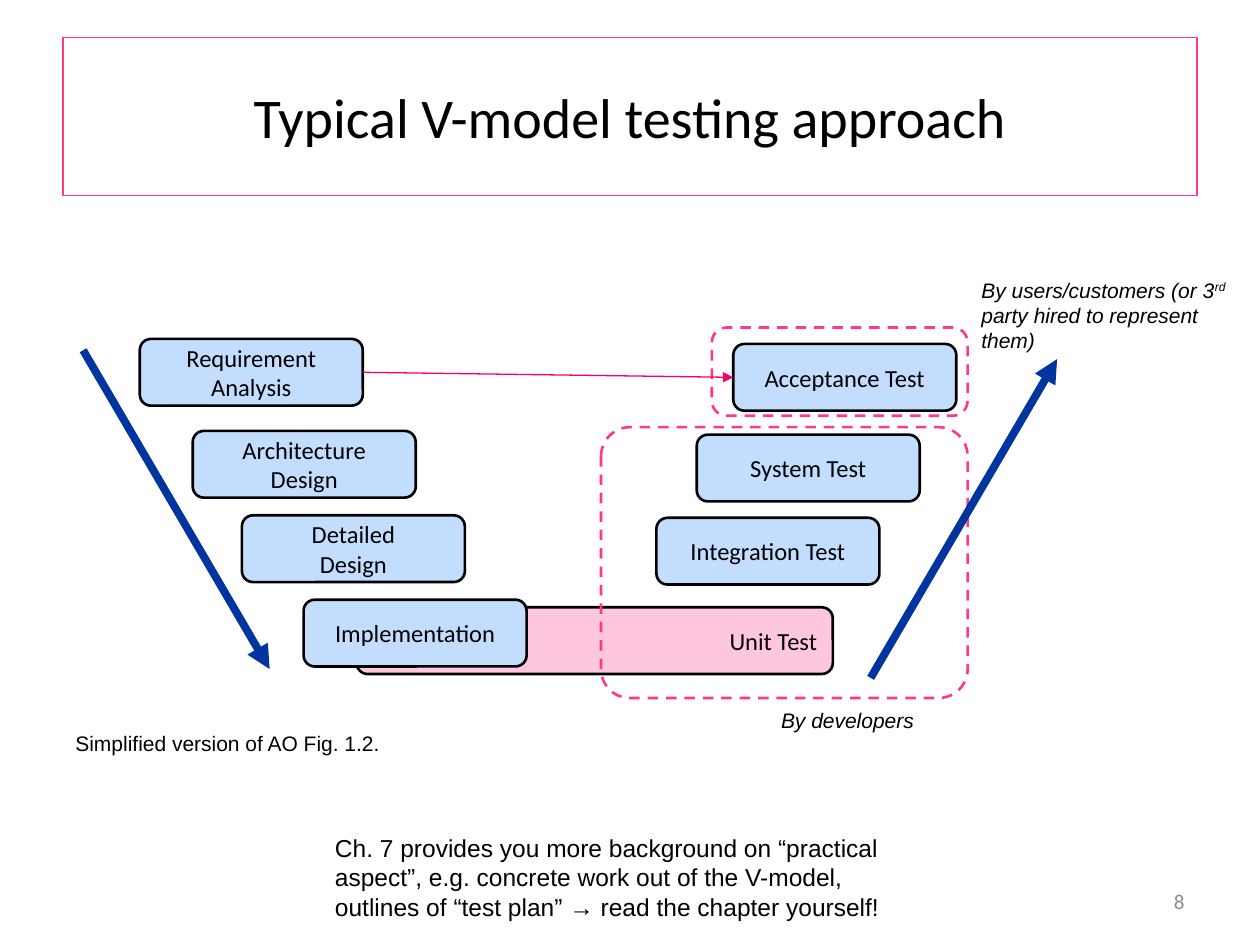
from dataclasses import dataclass

from lxml import etree
from pptx import Presentation
from pptx.dml.color import RGBColor
from pptx.enum.dml import MSO_LINE
from pptx.enum.shapes import MSO_CONNECTOR, MSO_SHAPE
from pptx.enum.text import MSO_ANCHOR, MSO_AUTO_SIZE, PP_ALIGN
from pptx.oxml.ns import qn
from pptx.util import Inches, Pt

BLACK = RGBColor(0x00, 0x00, 0x00)
GRAY = RGBColor(0x8C, 0x8C, 0x8C)
PINK = RGBColor(0xFF, 0x38, 0x8C)
LIGHT_PINK = RGBColor(0xFF, 0xC7, 0xDD)
MAGENTA = RGBColor(0xF9, 0x00, 0x69)
LIGHT_BLUE = RGBColor(0xC3, 0xDD, 0xFF)
NAVY = RGBColor(0x00, 0x34, 0x9E)

PHASE_WIDTH, PHASE_HEIGHT = 1.77, 0.53


@dataclass
class Box:
    left: float
    top: float
    width: float
    height: float

    def lengths(self):
        return map(Inches, (self.left, self.top, self.width, self.height))


@dataclass
class Phase:
    text: str
    left: float
    top: float


@dataclass
class Style:
    font: str = "Arial"
    size: float = 12
    color: RGBColor = BLACK
    italic: bool = False
    align: PP_ALIGN = PP_ALIGN.LEFT


LABEL = Style("Calibri", 14, align=PP_ALIGN.CENTER)
NOTE = Style(italic=True)

PHASES = [
    Phase("Requirement Analysis", 1.11, 2.69),
    Phase("Architecture Design", 1.53, 3.42),
    Phase("Detailed\nDesign", 1.92, 4.09),
    Phase("Implementation", 2.41, 4.76),
    Phase("Integration Test", 5.21, 4.11),
    Phase("System Test", 5.53, 3.45),
    Phase("Acceptance Test", 5.82, 2.73),
]


def write(shape, text: str, style: Style, anchor=MSO_ANCHOR.MIDDLE):
    frame = shape.text_frame
    frame.word_wrap = True
    frame.vertical_anchor = anchor
    frame.text = text
    for paragraph in frame.paragraphs:
        paragraph.alignment = style.align
        font = paragraph.font
        font.name, font.size, font.italic = style.font, Pt(style.size), style.italic
        font.color.rgb = style.color
    return frame


def add_box(slide, kind: MSO_SHAPE, box: Box, line: RGBColor, weight: float, fill=None):
    shape = slide.shapes.add_shape(kind, *box.lengths())
    shape.shadow.inherit = False
    if fill is None:
        shape.fill.background()
    else:
        shape.fill.solid()
        shape.fill.fore_color.rgb = fill
    shape.line.color.rgb = line
    shape.line.width = Pt(weight)
    return shape


def add_group_outline(slide, box: Box, corner: float):
    outline = add_box(slide, MSO_SHAPE.ROUNDED_RECTANGLE, box, PINK, 1.5)
    outline.adjustments[0] = corner
    outline.line.dash_style = MSO_LINE.DASH


def add_note(slide, box: Box, text: str, style: Style):
    note = slide.shapes.add_textbox(*box.lengths())
    frame = write(note, text, style, MSO_ANCHOR.TOP)
    frame.auto_size = MSO_AUTO_SIZE.SHAPE_TO_FIT_TEXT
    return frame


def add_arrow(slide, start: tuple, end: tuple, color: RGBColor, weight: float):
    arrow = slide.shapes.add_connector(
        MSO_CONNECTOR.STRAIGHT, *map(Inches, start + end))
    arrow.line.color.rgb = color
    arrow.line.width = Pt(weight)
    etree.SubElement(arrow.line._get_or_add_ln(), qn("a:tailEnd"), type="triangle")
    etree.SubElement(arrow._element.spPr, qn("a:effectLst"))
    return arrow


def main():
    prs = Presentation()
    prs.slide_width, prs.slide_height = Inches(10), Inches(7.5)
    slide = prs.slides.add_slide(prs.slide_layouts[6])

    # Unit test bar, behind the implementation phase
    unit_test = add_box(slide, MSO_SHAPE.ROUNDED_RECTANGLE,
                        Box(2.83, 4.82, 3.78, PHASE_HEIGHT), BLACK, 1.5, LIGHT_PINK)
    write(unit_test, "Unit Test", Style("Calibri", 14, align=PP_ALIGN.RIGHT))

    # Title and page number
    title = add_box(slide, MSO_SHAPE.RECTANGLE, Box(0.5, 0.3, 9, 1.25), PINK, 0.75)
    write(title, "Typical V-model testing approach",
          Style("Calibri", 32, align=PP_ALIGN.CENTER))
    page_number = slide.shapes.add_textbox(*Box(7.17, 6.95, 2.33, 0.4).lengths())
    write(page_number, "8", Style("Calibri", 12, GRAY, align=PP_ALIGN.RIGHT))

    # Who carries out the tests
    add_group_outline(slide, Box(5.65, 2.6, 2.03, 0.7), 0.167)
    users = add_note(slide, Box(7.69, 2.15, 2.19, 0.71),
                     "By users/customers (or 3", NOTE).paragraphs[0]
    ordinal = users.add_run()
    ordinal.text = "rd"
    ordinal.font._element.set("baseline", "30000")
    users.add_run().text = " party hired to represent them)"
    add_group_outline(slide, Box(4.77, 3.39, 2.91, 2.15), 0.107)
    add_note(slide, Box(6.1, 5.57, 1.48, 0.3), "By developers", NOTE)

    # Reading advice
    add_note(slide, Box(2.56, 6.56, 4.75, 0.81),
             "Ch. 7 provides you more background on “practical aspect”, "
             "e.g. concrete work out of the V-model, outlines of “test plan” "
             "→ read the chapter yourself!", Style(size=14))

    # Phases of the V
    phases = {}
    for phase in PHASES:
        box = Box(phase.left, phase.top, PHASE_WIDTH, PHASE_HEIGHT)
        phases[phase.text] = add_box(
            slide, MSO_SHAPE.ROUNDED_RECTANGLE, box, BLACK, 1.5, LIGHT_BLUE)
        write(phases[phase.text], phase.text, LABEL)

    # Directions of the V, and the link from requirements to acceptance
    add_arrow(slide, (0.66, 2.78), (2.14, 5.31), NAVY, 4.5)
    link = add_arrow(slide, (2.88, 2.96), (5.82, 2.99), MAGENTA, 0.75)
    link.begin_connect(phases["Requirement Analysis"], 3)
    link.end_connect(phases["Acceptance Test"], 1)
    add_arrow(slide, (6.91, 5.38), (8.39, 2.85), NAVY, 4.5)

    # Figure source
    figure_source = add_note(slide, Box(0.5, 5.75, 2.64, 0.3),
                             "Simplified version of AO Fig. 1.2.", Style())
    figure_source.word_wrap = False

    prs.save("out.pptx")


if __name__ == "__main__":
    main()
